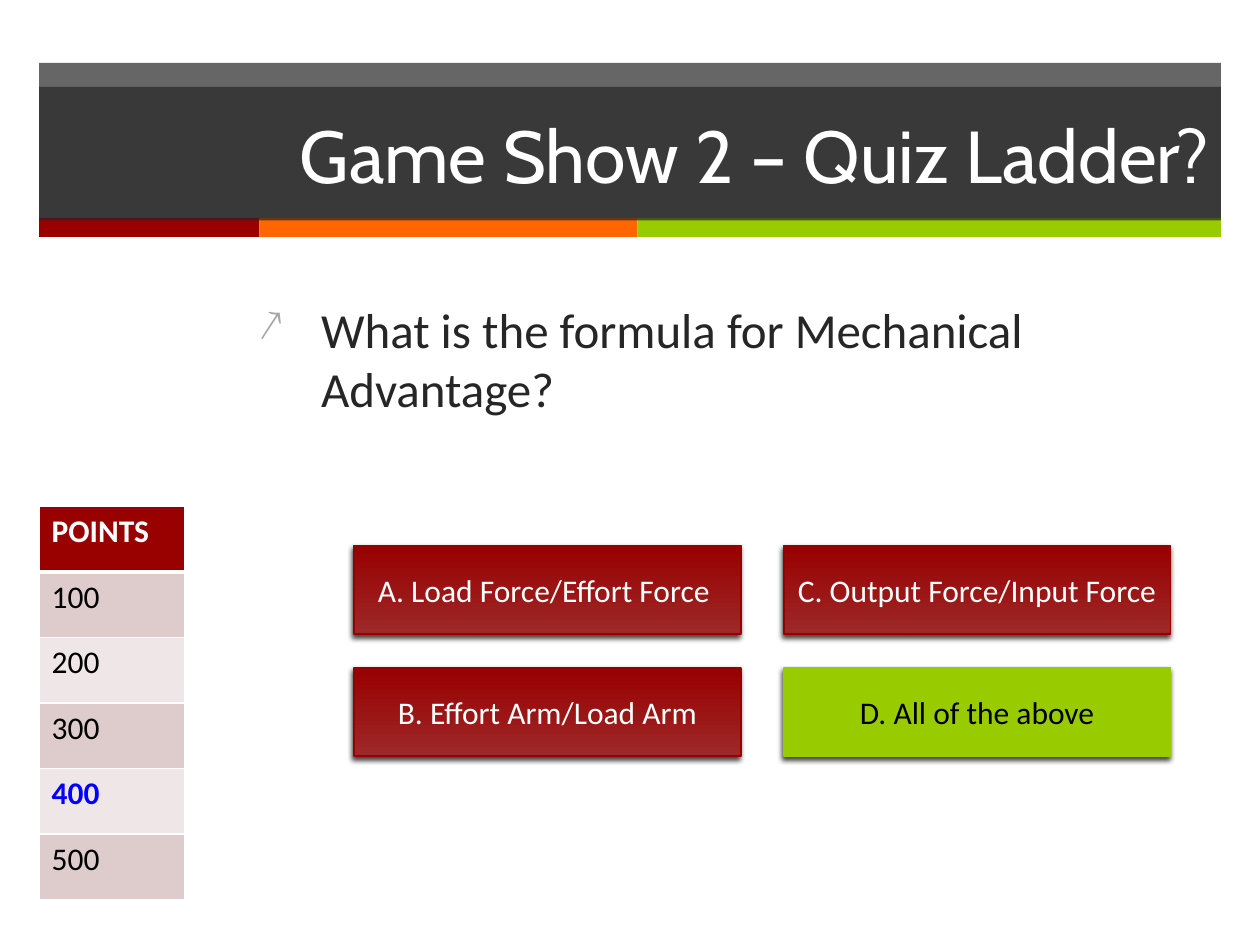
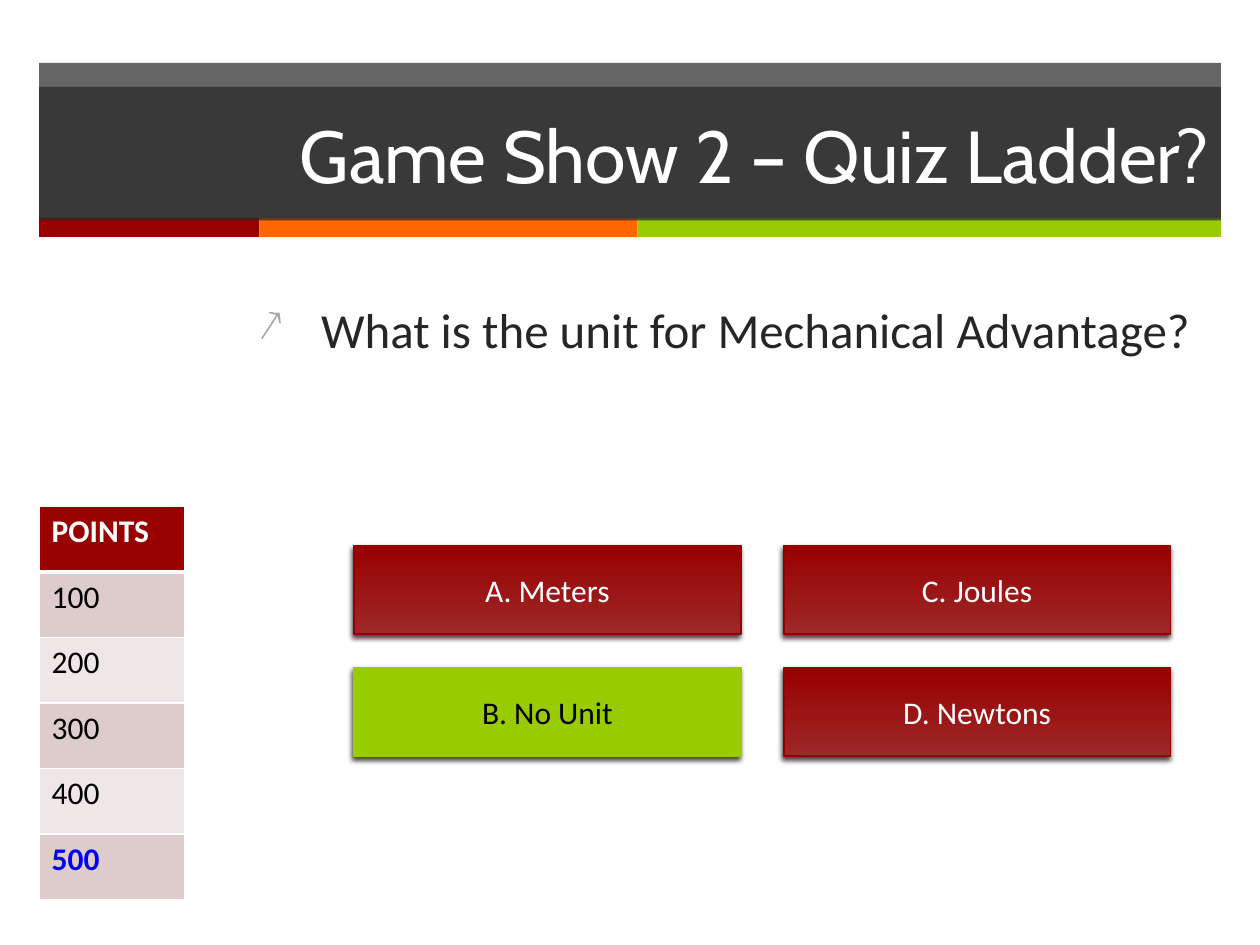
from lxml.etree import SubElement as Sub
from pptx import Presentation
from pptx.dml.color import RGBColor as Rgb
from pptx.enum.shapes import MSO_SHAPE as Kind
from pptx.enum.text import MSO_ANCHOR as Anchor, PP_ALIGN as Align
from pptx.oxml.ns import qn
from pptx.util import Inches, Pt

RED, ORANGE, LIME = "990000", "FF6600", "99CC00"
DARK, WHITE, BLACK, BLUE = "262626", "FFFFFF", "000000", "0000FF"
EDGE, GLOW, GREY = "960000", "9D2828", "A6A6A6"
ROWS = ("DECCCC", "EFE7E7")
TITLE = "Game Show 2 – Quiz Ladder?"
POINTS = ["POINTS", "100", "200", "300", "400", "500"]

HEAD = (0.31, 0.5, 9.38, 1.38)
ASK = (1.95, 2.33, 7.74, 1.33)
SCORE = (0.31, 4.02, 1.16, 3.12)
GRID = (2.81, 4.33, 6.48, 1.67)

ROUNDS = [
    ("What is the formula for Mechanical Advantage?",
     ["A. Load Force/Effort Force ", "B. Effort Arm/Load Arm",
      "C. Output Force/Input Force", "D. All of the above"], 3, "400"),
    ("What is the unit for Mechanical Advantage?",
     ["A. Meters", "B. No Unit", "C. Joules", "D. Newtons"], 1, "500"),
]


def paint(color, code):
    """Give a colour object its hex value."""
    color.rgb = Rgb.from_string(code)


def node(parent, tag, **attrs):
    """Add a drawing element with attributes."""
    return Sub(parent, qn("a:" + tag), {k: str(v) for k, v in attrs.items()})


def fill(item, code):
    """Fill a shape or cell with one colour."""
    item.fill.solid()
    paint(item.fill.fore_color, code)


def write(frame, text, size, code, face="Calibri", bold=False,
          align=Align.LEFT, anchor=Anchor.TOP):
    """Write one styled paragraph and return it."""
    frame.word_wrap = True
    frame.vertical_anchor = anchor
    para = frame.paragraphs[0]
    para.alignment = align
    run = para.add_run()
    run.text = text
    style = {"size": Pt(size), "name": face, "bold": bold}
    for key, value in style.items():
        setattr(run.font, key, value)
    paint(run.font.color, code)
    return para


def block(slide, box, code, alpha=None):
    """Draw a flat rectangle, see-through if alpha is given."""
    shape = slide.shapes.add_shape(Kind.RECTANGLE, *map(Inches, box))
    shape.shadow.inherit = False
    fill(shape, code)
    shape.line.fill.background()
    if alpha:
        tint = shape.fill._xPr.find(".//" + qn("a:srgbClr"))
        node(tint, "alpha", val=alpha * 1000)
    return shape


def header(slide, box):
    """Draw the title band with its colour strip."""
    x, y, w, h = box
    block(slide, (x, y, w, h - 0.14), DARK, 70)
    left = x
    for code, wide in ((RED, 1.75), (ORANGE, 3), (LIME, w - 4.75)):
        block(slide, (left, y + h - 0.15, wide, 0.15), code)
        left += wide
    title = block(slide, (x, y + 0.19, w, 1.06), DARK, 70)
    write(title.text_frame, TITLE, 42, WHITE, "Cabin",
          align=Align.RIGHT, anchor=Anchor.MIDDLE)


def question(slide, box, text):
    """Place the question with its arrow bullet."""
    area = slide.shapes.add_textbox(*map(Inches, box))
    para = write(area.text_frame, text, 28, DARK)
    para.space_before = Pt(20)
    props = para._p.get_or_add_pPr()
    props.set("marL", str(Inches(0.5)))
    props.set("indent", str(Inches(-0.5)))
    node(node(props, "buClr"), "srgbClr", val=GREY)
    node(props, "buSzPct", val=90000)
    node(props, "buChar", char="↗")


def border(cell, top, bottom):
    """Draw white lines round a cell."""
    props = cell._tc.get_or_add_tcPr()
    for side, width in zip("LRTB", (1, 1, top, bottom)):
        line = node(props, "ln" + side, w=Pt(width))
        node(node(line, "solidFill"), "srgbClr", val=WHITE)


def score(slide, box, mark):
    """Build the points table and mark the current row."""
    table = slide.shapes.add_table(len(POINTS), 1, *map(Inches, box)).table
    for i, text in enumerate(POINTS):
        table.rows[i].height = Inches(box[3] / len(POINTS))
        cell = table.cell(i, 0)
        border(cell, 3 if i == 1 else 1, 3 if i == 0 else 1)
        fill(cell, ROWS[(i - 1) % 2] if i else RED)
        code = WHITE if i == 0 else BLUE if text == mark else BLACK
        write(cell.text_frame, text, 18, code, bold=code != BLACK)


def button(slide, box, text, right):
    """Draw one answer, lime when it is right."""
    shape = block(slide, box, LIME)
    if not right:
        shape.fill.gradient()
        shape.fill.gradient_angle = 90
        for stop, code in zip(shape.fill.gradient_stops, (GLOW, RED)):
            paint(stop.color, code)
    shape.line.width = Pt(1)
    fill(shape.line, LIME if right else EDGE)
    effects = shape._element.spPr.find(qn("a:effectLst"))
    shade = node(effects, "outerShdw", blurRad=Pt(3), dist=Pt(2),
                 dir=110 * 60000, rotWithShape=0)
    node(node(shade, "srgbClr", val=BLACK), "alpha", val=75000)
    write(shape.text_frame, text, 18, BLACK if right else WHITE,
          align=Align.CENTER, anchor=Anchor.MIDDLE)


def answers(slide, box, texts, right):
    """Lay the four answers out column by column."""
    x, y, w, h = box
    wide, high = 3.07, 0.7
    for i, text in enumerate(texts):
        col, row = divmod(i, 2)
        spot = (x + col * (w - wide), y + row * (h - high), wide, high)
        button(slide, spot, text, i == right)


def main():
    """Build the quiz slides and save them."""
    deck = Presentation()
    deck.slide_width, deck.slide_height = Inches(10), Inches(7.5)
    for text, texts, right, mark in ROUNDS:
        slide = deck.slides.add_slide(deck.slide_layouts[6])
        header(slide, HEAD)
        question(slide, ASK, text)
        score(slide, SCORE, mark)
        answers(slide, GRID, texts, right)
    deck.save("out.pptx")


if __name__ == "__main__":
    main()
